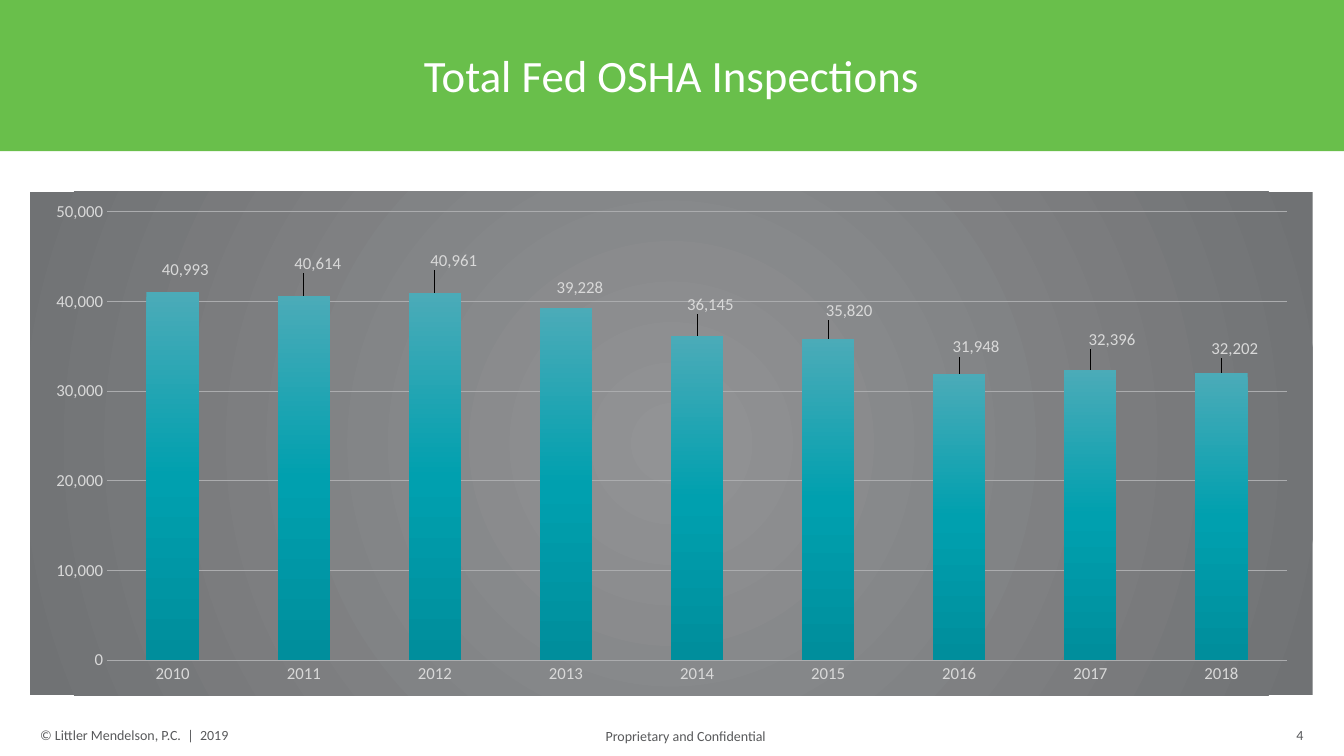
from lxml import etree
from pptx import Presentation
from pptx.chart import data
from pptx.dml import color
from pptx.enum import chart as charts, shapes, text
from pptx.oxml import ns, parse_xml
from pptx.util import Pt

FONT = "Calibri"
WHITE, GREEN, GREY, PALE, GRID = "FFFFFF", "69BF4B", "58595B", "D9D9D9", "ABACAE"
BAR_STOPS = [(0, "4BABB8"), (50, "00A0AF"), (100, "008E9C")]
PANEL_STOPS = [(0, "929395"), (100, "707274")]

YEARS = [str(year) for year in range(2010, 2019)]
INSPECTIONS = [40993, 40614, 40961, 39228, 36145, 35820, 31948, 32396, 32020]
LABEL_TEXT = {8: "32,202"}
# Shift of each value label from its usual place above the bar, in points
LABEL_SHIFTS = [(9, -6), (10, -13), (13.5, -13), (10, -4.5), (9.5, -12.5),
                (15, -10.5), (12, -9), (15.5, -11.5), (9.5, -7.5)]


def rgb(value):
    return color.RGBColor.from_string(value)


def format_font(font, size, fill):
    font.name, font.size = FONT, Pt(size)
    font.color.rgb = rgb(fill)


def write(frame, words, size=10, fill=GREY, align=text.PP_ALIGN.LEFT,
          anchor=text.MSO_ANCHOR.TOP, spacing=None, wrap=True):
    frame.word_wrap = wrap
    frame.vertical_anchor = anchor
    paragraph = frame.paragraphs[0]
    paragraph.alignment = align
    paragraph.line_spacing = spacing
    run = paragraph.add_run()
    run.text = words
    format_font(run.font, size, fill)


def gradient(stops, direction):
    """Return a c:spPr element with a gradient fill and no line."""
    marks = "".join(f'<a:gs pos="{position * 1000}"><a:srgbClr val="{value}"/></a:gs>'
                    for position, value in stops)
    return parse_xml(f'<c:spPr {ns.nsdecls("c", "a")}><a:gradFill rotWithShape="1">'
                     f'<a:gsLst>{marks}</a:gsLst>{direction}</a:gradFill>'
                     '<a:ln><a:noFill/></a:ln></c:spPr>')


def manual_layout(inner=False, **values):
    """Return a c:layout element; values are fractions of the chart size."""
    layout = etree.Element(ns.qn("c:layout"))
    manual = etree.SubElement(layout, ns.qn("c:manualLayout"))
    if inner:
        values = {"layoutTarget": "inner", "xMode": "edge", "yMode": "edge", **values}
    for name, value in values.items():
        etree.SubElement(manual, ns.qn(f"c:{name}"), val=str(value))
    return layout


class SlideBuilder:
    def __init__(self, presentation):
        self.slide = presentation.slides.add_slide(presentation.slide_layouts[5])
        self.shapes = self.slide.shapes

    def band(self, left, top, width, height, fill):
        shape = self.shapes.add_shape(shapes.MSO_SHAPE.RECTANGLE,
                                      Pt(left), Pt(top), Pt(width), Pt(height))
        shape.shadow.inherit = False
        shape.fill.solid()
        shape.fill.fore_color.rgb = rgb(fill)
        shape.line.fill.background()

    def title(self, left, top, width, height, words):
        title = self.shapes.title
        title.left, title.top = Pt(left), Pt(top)
        title.width, title.height = Pt(width), Pt(height)
        write(title.text_frame, words, size=32, fill=WHITE, spacing=0.9,
              align=text.PP_ALIGN.CENTER, anchor=text.MSO_ANCHOR.MIDDLE)
        title.element.getparent().append(title.element)

    def label(self, left, top, width, height, words, **style):
        box = self.shapes.add_textbox(Pt(left), Pt(top), Pt(width), Pt(height))
        write(box.text_frame, words, **style)

    def column_chart(self, left, top, width, height):
        chart_data = data.CategoryChartData(number_format="#,##0")
        chart_data.categories = YEARS
        chart_data.add_series("Series 1", INSPECTIONS)
        chart = self.shapes.add_chart(charts.XL_CHART_TYPE.COLUMN_CLUSTERED, Pt(left),
                                      Pt(top), Pt(width), Pt(height), chart_data).chart
        chart.has_legend = chart.has_title = False
        format_font(chart.font, 10, GREY)
        space = chart.element
        space.find(ns.qn("c:chart")).addnext(gradient(
            PANEL_STOPS, '<a:path path="circle"><a:fillToRect l="50000" t="50000" '
            'r="50000" b="50000"/></a:path>'))
        plot_area = space.find(".//" + ns.qn("c:plotArea"))
        for layout in plot_area.findall(ns.qn("c:layout")):
            plot_area.remove(layout)
        plot_area.insert(0, manual_layout(inner=True, x=0.06, y=0.04, w=0.92, h=0.89))
        self.axes(chart)
        plot = chart.plots[0]
        plot.gap_width = 150
        plot.vary_by_categories = False
        series = plot.series[0]
        series.format.fill.solid()
        bar_style = series.format.fill._xPr
        bar_style.getparent().replace(
            bar_style, gradient(BAR_STOPS, '<a:lin ang="5400000" scaled="0"/>'))
        self.value_labels(series, width, height)

    def axes(self, chart):
        for axis in (chart.category_axis, chart.value_axis):
            axis.major_tick_mark = axis.minor_tick_mark = charts.XL_TICK_MARK.NONE
            axis.format.line.fill.background()
            format_font(axis.tick_labels.font, 12, PALE)
        values = chart.value_axis
        values.minimum_scale, values.maximum_scale, values.major_unit = 0, 50000, 10000
        values.tick_labels.number_format = "#,##0"
        values.tick_labels.number_format_is_linked = False
        values.major_gridlines.format.line.color.rgb = rgb(GRID)
        values.major_gridlines.format.line.width = Pt(0.75)

    def value_labels(self, series, width, height):
        labels = series.data_labels
        labels.show_value = True
        labels.number_format, labels.number_format_is_linked = "#,##0", False
        labels.position = charts.XL_LABEL_POSITION.OUTSIDE_END
        format_font(labels.font, 12, PALE)
        for index, (across, down) in enumerate(LABEL_SHIFTS):
            label = series.points[index].data_label
            if index in LABEL_TEXT:
                run = label.text_frame.paragraphs[0].add_run()
                run.text = LABEL_TEXT[index]
                format_font(run.font, 12, PALE)
            else:
                format_font(label.font, 12, PALE)
            label.position = charts.XL_LABEL_POSITION.OUTSIDE_END
            element = label._get_or_add_dLbl()
            element.find(ns.qn("c:idx")).addnext(
                manual_layout(x=round(across / width, 4), y=round(down / height, 4)))


def main():
    presentation = Presentation()
    presentation.slide_width, presentation.slide_height = Pt(960), Pt(540)
    builder = SlideBuilder(presentation)
    builder.label(21.6, 515.5, 242.6, 19.4, "© Littler Mendelson, P.C.  |  2019")
    builder.label(425.5, 516, 130.3, 19.4, "Proprietary and Confidential", wrap=False)
    builder.band(0, 0, 960, 108, GREEN)
    builder.title(21.6, 10, 916, 91.4, "Total Fed OSHA Inspections")
    builder.label(714.2, 516.2, 224, 18, "4", align=text.PP_ALIGN.RIGHT,
                  anchor=text.MSO_ANCHOR.MIDDLE)
    builder.column_chart(21.6, 136.8, 916, 360)
    presentation.save("out.pptx")


if __name__ == "__main__":
    main()
